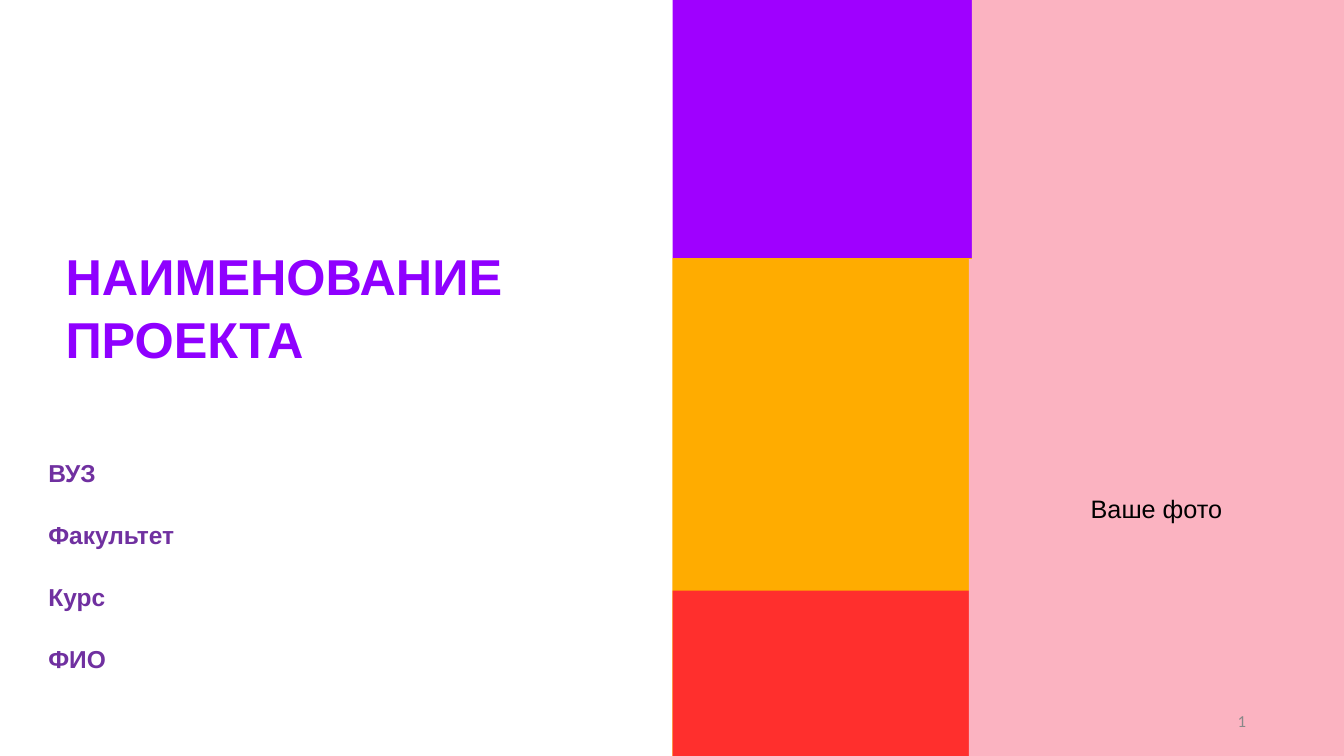
import dataclasses

import pptx
import pptx.dml.color
import pptx.enum.shapes
import pptx.enum.text
import pptx.util

Inches = pptx.util.Inches
Pt = pptx.util.Pt
Align = pptx.enum.text.PP_ALIGN
Anchor = pptx.enum.text.MSO_ANCHOR


@dataclasses.dataclass(frozen=True)
class Theme:
    heading_font: str = "Arial"
    number_font: str = "Calibri"
    purple: str = "9F00FF"
    orange: str = "FFAC00"
    red: str = "FF2F2D"
    pink: str = "FBB3C1"
    title_color: str = "8F00FF"
    detail_color: str = "7030A0"
    black: str = "000000"
    gray: str = "888888"
    title_size: float = 36
    detail_size: float = 17.5
    caption_size: float = 18
    number_size: float = 12


class SlideBuilder:
    def __init__(self, page, theme):
        self.page = page
        self.theme = theme

    def set_text(self, shape, lines, size, color, bold=False, align=Align.LEFT,
                 anchor=Anchor.MIDDLE, font=None, spacing=None, gap=0):
        """Fill a shape with paragraphs that share one format."""
        frame = shape.text_frame
        frame.word_wrap = True
        frame.auto_size = pptx.enum.text.MSO_AUTO_SIZE.NONE
        frame.vertical_anchor = anchor
        frame.margin_left = frame.margin_right = Inches(0.05)
        frame.margin_top = frame.margin_bottom = Inches(0.05)
        frame.text = "\n".join(lines)
        for para in frame.paragraphs:
            para.alignment = align
            para.line_spacing = spacing
            para.space_after = Pt(gap)
            para.font.name = font or self.theme.heading_font
            para.font.size = Pt(size)
            para.font.bold = bold
            para.font.color.rgb = pptx.dml.color.RGBColor.from_string(color)

    def title(self, text, left, top, width, height):
        shape = self.page.shapes.title
        shape.left, shape.top = Inches(left), Inches(top)
        shape.width, shape.height = Inches(width), Inches(height)
        self.set_text(shape, [text], self.theme.title_size,
                      self.theme.title_color, bold=True, spacing=1.05)

    def block(self, color, left, top, width, height):
        shape = self.page.shapes.add_shape(
            pptx.enum.shapes.MSO_SHAPE.RECTANGLE,
            Inches(left), Inches(top), Inches(width), Inches(height))
        shape.shadow.inherit = False
        shape.fill.solid()
        shape.fill.fore_color.rgb = pptx.dml.color.RGBColor.from_string(color)
        shape.line.fill.background()
        return shape

    def text(self, lines, left, top, width, height, size, color, **style):
        box = self.page.shapes.add_textbox(
            Inches(left), Inches(top), Inches(width), Inches(height))
        self.set_text(box, lines, size, color, **style)
        return box


def main():
    deck = pptx.Presentation()
    deck.slide_width, deck.slide_height = Inches(13.33), Inches(7.5)
    page = deck.slides.add_slide(deck.slide_layouts.get_by_name("Title Only"))
    theme = Theme()
    builder = SlideBuilder(page, theme)

    builder.block(theme.orange, 6.67, 2.56, 6.7, 4.95)
    builder.block(theme.purple, 6.67, 0, 6.69, 2.56)
    builder.block(theme.red, 6.67, 5.86, 6.69, 1.66)
    builder.title("НАИМЕНОВАНИЕ ПРОЕКТА", 0.6, 2.28, 6.03, 1.5)

    builder.block(theme.pink, 9.64, 0, 3.72, 4.68)
    photo = builder.block(theme.pink, 9.61, 2.57, 3.72, 4.95)
    builder.set_text(photo, ["Ваше фото"], theme.caption_size, theme.black,
                     align=Align.CENTER)

    builder.text(["ВУЗ", "Факультет", "Курс", "ФИО"], 0.43, 4.49, 6.03, 2.19,
                 theme.detail_size, theme.detail_color, bold=True,
                 anchor=Anchor.TOP, gap=23.5)
    number = builder.text(["1"], 12.13, 7.02, 0.28, 0.27, theme.number_size,
                          theme.gray, align=Align.RIGHT,
                          font=theme.number_font)
    number.text_frame.word_wrap = False

    deck.save("out.pptx")


if __name__ == "__main__":
    main()
